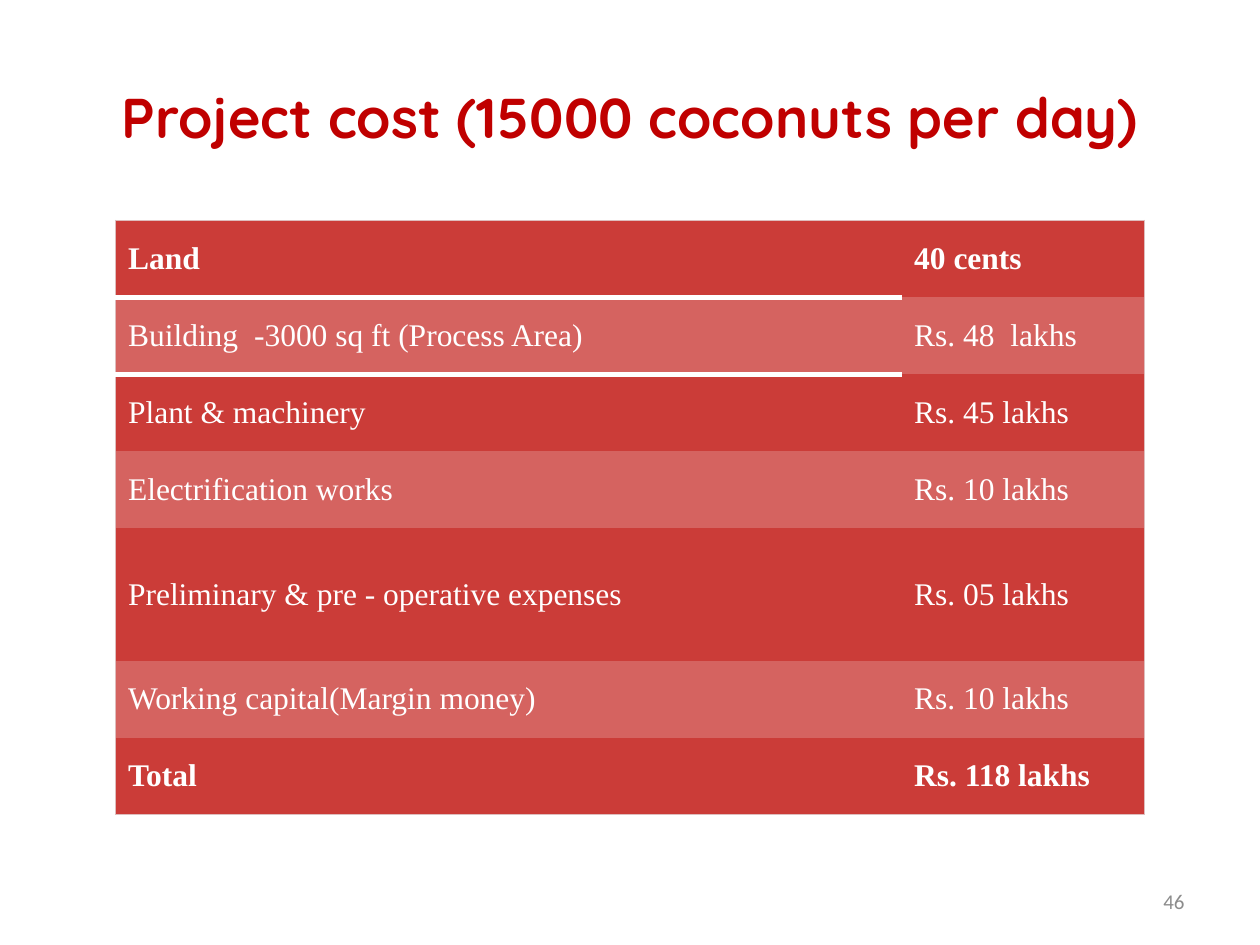
from lxml import etree
from pptx import Presentation
from pptx.dml.color import RGBColor
from pptx.enum.text import MSO_ANCHOR, PP_ALIGN
from pptx.oxml.ns import qn
from pptx.util import Pt

MIDDLE = MSO_ANCHOR.MIDDLE
LEFT, CENTER, RIGHT = PP_ALIGN.LEFT, PP_ALIGN.CENTER, PP_ALIGN.RIGHT

TITLE_RED, ROW_RED, ROW_LIGHT = "C00000", "CB3C38", "D56360"
WHITE, PAGE_GRAY, FRAME_PINK = "FFFFFF", "8C8C8C", "DEBDBD"
NO_STYLE_NO_GRID = "{2D5ABB26-0587-4C30-8999-92F81FD0307C}"

COSTS = [
    ("Land", "40 cents"),
    ("Building\t-3000 sq ft (Process Area)", "Rs. 48  lakhs"),
    ("Plant & machinery", "Rs. 45 lakhs"),
    ("Electrification works", "Rs. 10 lakhs"),
    ("Preliminary & pre - operative expenses", "Rs. 05 lakhs"),
    ("Working capital(Margin money)", "Rs. 10 lakhs"),
    ("Total", "Rs. 118 lakhs"),
]
TALL_ROW = 4
TALL_ROW_RATIO = 1.72
ITEM_SHARE = 0.764


def color(hex_text):
    return RGBColor.from_string(hex_text)


def write(frame, text, font, size, ink, bold=False, align=LEFT):
    paragraph = frame.paragraphs[0]
    paragraph.alignment = align
    run = paragraph.add_run()
    run.text = text
    run.font.name = font
    run.font.size = Pt(size)
    run.font.bold = bold
    run.font.color.rgb = color(ink)


def add_text(slide, box, text, **style):
    frame = slide.shapes.add_textbox(*(Pt(v) for v in box)).text_frame
    frame.word_wrap = True
    frame.vertical_anchor = MIDDLE
    write(frame, text, **style)


def add_border(cell, side, ink, width):
    """Draw one cell edge; side is L, R, T or B, given in that order."""
    line = etree.SubElement(cell._tc.get_or_add_tcPr(), qn(f"a:ln{side}"), w=str(Pt(width)))
    fill = etree.SubElement(line, qn("a:solidFill"))
    etree.SubElement(fill, qn("a:srgbClr"), val=ink)


def add_cost_table(slide, box):
    left, top, width, height = box
    last_row = len(COSTS) - 1
    table = slide.shapes.add_table(
        len(COSTS), 2, Pt(left), Pt(top), Pt(width), Pt(height)).table
    table._tbl.tblPr.find(qn("a:tableStyleId")).text = NO_STYLE_NO_GRID

    table.columns[0].width = Pt(width * ITEM_SHARE)
    table.columns[1].width = Pt(width * (1 - ITEM_SHARE))
    row_height = height / (last_row + TALL_ROW_RATIO)

    for r, entries in enumerate(COSTS):
        table.rows[r].height = Pt(row_height * (TALL_ROW_RATIO if r == TALL_ROW else 1))
        for c, entry in enumerate(entries):
            cell = table.cell(r, c)
            cell.vertical_anchor = MIDDLE
            write(cell.text_frame, entry, font="Times New Roman", size=18,
                  ink=WHITE, bold=r in (0, last_row))
            add_border(cell, "LR"[c], FRAME_PINK, 0.75)
            if r == 0:
                add_border(cell, "T", FRAME_PINK, 0.75)
            if r == last_row:
                add_border(cell, "B", FRAME_PINK, 0.75)
            if r == 0 and c == 0:
                add_border(cell, "B", WHITE, 3)
            if r == 1 and c == 0:
                add_border(cell, "T", WHITE, 3)
            cell.fill.solid()
            cell.fill.fore_color.rgb = color(ROW_LIGHT if r % 2 else ROW_RED)


def main():
    deck = Presentation()
    deck.slide_width, deck.slide_height = Pt(720), Pt(540)
    slide = deck.slides.add_slide(deck.slide_layouts[6])
    add_text(slide, (36, 21.6, 648, 90), "Project cost (15000 coconuts per day)",
             font="Quicksand", size=32, ink=TITLE_RED, bold=True, align=CENTER)
    add_cost_table(slide, (66, 126, 588, 339.6))
    add_text(slide, (516, 500.5, 168, 28.8), "46",
             font="Calibri", size=12, ink=PAGE_GRAY, align=RIGHT)
    deck.save("out.pptx")


if __name__ == "__main__":
    main()
